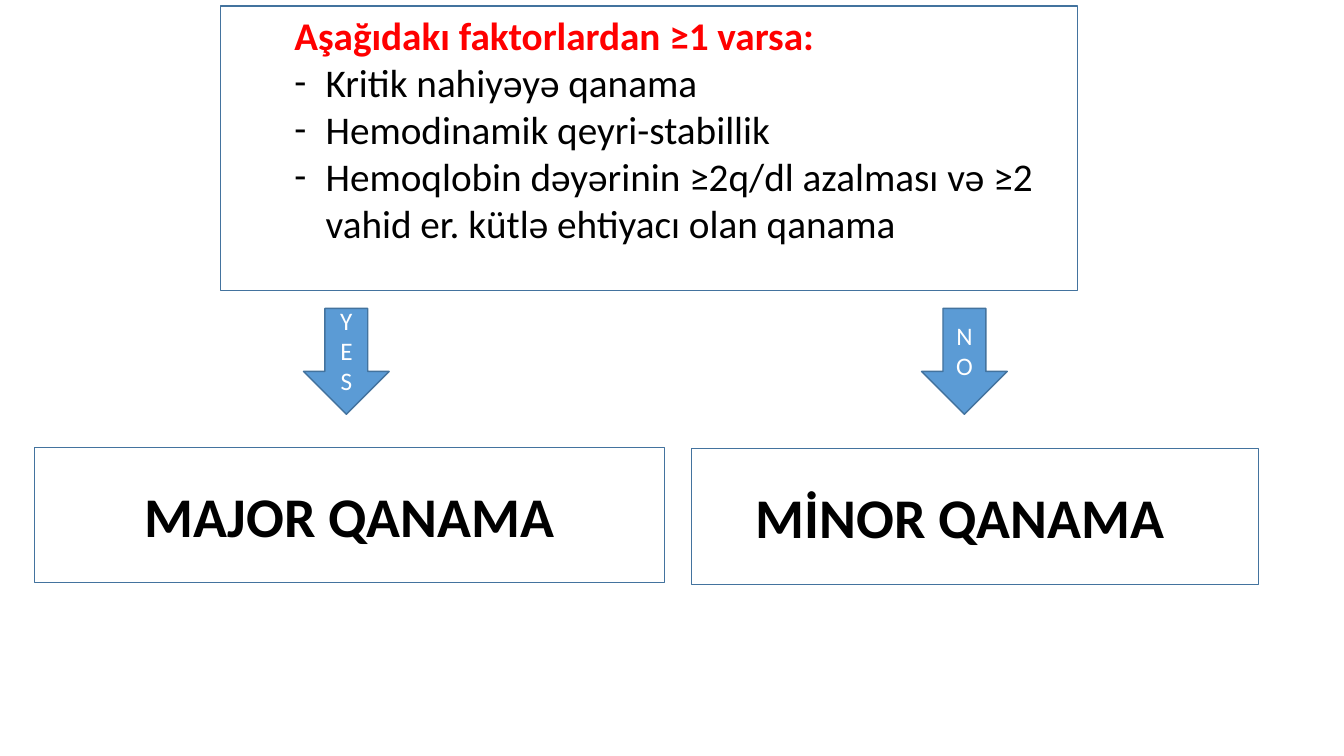
from lxml import etree
from pptx import Presentation, util as u
from pptx.dml.color import RGBColor
from pptx.enum import shapes, text
from pptx.oxml import ns

COLORS = {"outline": "43739E", "arrow": "5B9BD5", "heading": "FF0000",
          "body": "000000", "label": "FFFFFF"}
WIDTH, HEIGHT = 13.33, 7.5
CRITERIA = ["Kritik nahiyəyə qanama", "Hemodinamik qeyri-stabillik",
            "Hemoqlobin dəyərinin ≥2q/dl azalması və ≥2 vahid er. kütlə ehtiyacı olan qanama"]
OUTCOMES = [
    {"answer": "YES", "arrow": (3.01, 3.06, 0.85, 1.05), "box": (0.34, 4.44, 6.25, 1.34),
     "verdict": "MAJOR QANAMA", "center": 3.465},
    {"answer": "NO", "arrow": (9.14, 3.06, 0.85, 1.05), "box": (6.86, 4.45, 5.62, 1.35),
     "verdict": "MİNOR QANAMA", "center": 9.52},
]


def inches(box):
    """Turn a box in inches into slide lengths."""
    return [u.Inches(value) for value in box]


def write(paragraph, wording, size=28, color="body", bold=False, align=text.PP_ALIGN.LEFT):
    """Write one formatted run into a paragraph."""
    paragraph.alignment = align
    paragraph.space_before = u.Pt(0)
    run = paragraph.add_run()
    run.text = wording
    run.font.name = "Calibri"
    run.font.size = u.Pt(size)
    run.font.bold = bold
    run.font.color.rgb = RGBColor.from_string(COLORS[color])


def set_bullet(paragraph, mark=None, hang=0.0):
    """Give a paragraph a hanging bullet, or none."""
    props = paragraph._p.get_or_add_pPr()
    props.set("marL", str(u.Inches(hang)))
    props.set("indent", str(-u.Inches(hang)))
    if mark:
        etree.SubElement(props, ns.qn("a:buFont")).set("typeface", "Calibri")
        etree.SubElement(props, ns.qn("a:buChar")).set("char", mark)
    else:
        etree.SubElement(props, ns.qn("a:buNone"))


def add_outlined(slide, kind, box, fill=None):
    """Add an outlined preset shape, filled if a colour is named."""
    shape = slide.shapes.add_shape(kind, *inches(box))
    shape.shadow.inherit = False
    shape.line.color.rgb = RGBColor.from_string(COLORS["outline"])
    shape.line.width = u.Pt(1)
    if fill:
        shape.fill.solid()
        shape.fill.fore_color.rgb = RGBColor.from_string(COLORS[fill])
    else:
        shape.fill.background()
    return shape


def add_criteria(slide, box):
    """Frame the heading and list of bleeding criteria."""
    left, top, width, height = box
    add_outlined(slide, shapes.MSO_SHAPE.RECTANGLE, box)
    body = slide.placeholders[1]
    body.left, body.top, body.width, body.height = inches(
        (left + 0.63, top, width - 0.33, height - 0.36))
    frame = body.text_frame
    frame.auto_size = text.MSO_AUTO_SIZE.NONE
    heading = frame.paragraphs[0]
    write(heading, "Aşağıdakı faktorlardan ≥1 varsa:", color="heading", bold=True)
    set_bullet(heading)
    for criterion in CRITERIA:
        item = frame.add_paragraph()
        write(item, criterion)
        set_bullet(item, "-", 0.31)


def add_outcome(slide, answer, arrow, box, verdict, center):
    """Add an answer arrow and the boxed verdict it leads to."""
    pointer = add_outlined(slide, shapes.MSO_SHAPE.DOWN_ARROW, arrow, "arrow")
    pointer.text_frame.word_wrap = True
    pointer.text_frame.vertical_anchor = text.MSO_ANCHOR.MIDDLE
    write(pointer.text_frame.paragraphs[0], answer, size=18, color="label",
          align=text.PP_ALIGN.CENTER)

    add_outlined(slide, shapes.MSO_SHAPE.RECTANGLE, box)
    label = slide.shapes.add_textbox(*inches((center - 2.15, box[1] + 0.29, 4.3, 0.77)))
    label.text_frame.word_wrap = True
    write(label.text_frame.paragraphs[0], verdict, size=40, bold=True,
          align=text.PP_ALIGN.CENTER)


def main():
    """Build the bleeding classification slide."""
    deck = Presentation()
    deck.slide_width, deck.slide_height = inches((WIDTH, HEIGHT))
    slide = deck.slides.add_slide(deck.slide_layouts[1])
    unused_title = slide.shapes.title.element
    unused_title.getparent().remove(unused_title)
    add_criteria(slide, (2.19, 0.06, 8.5, 2.82))
    for outcome in OUTCOMES:
        add_outcome(slide, **outcome)
    deck.save("out.pptx")


if __name__ == "__main__":
    main()
